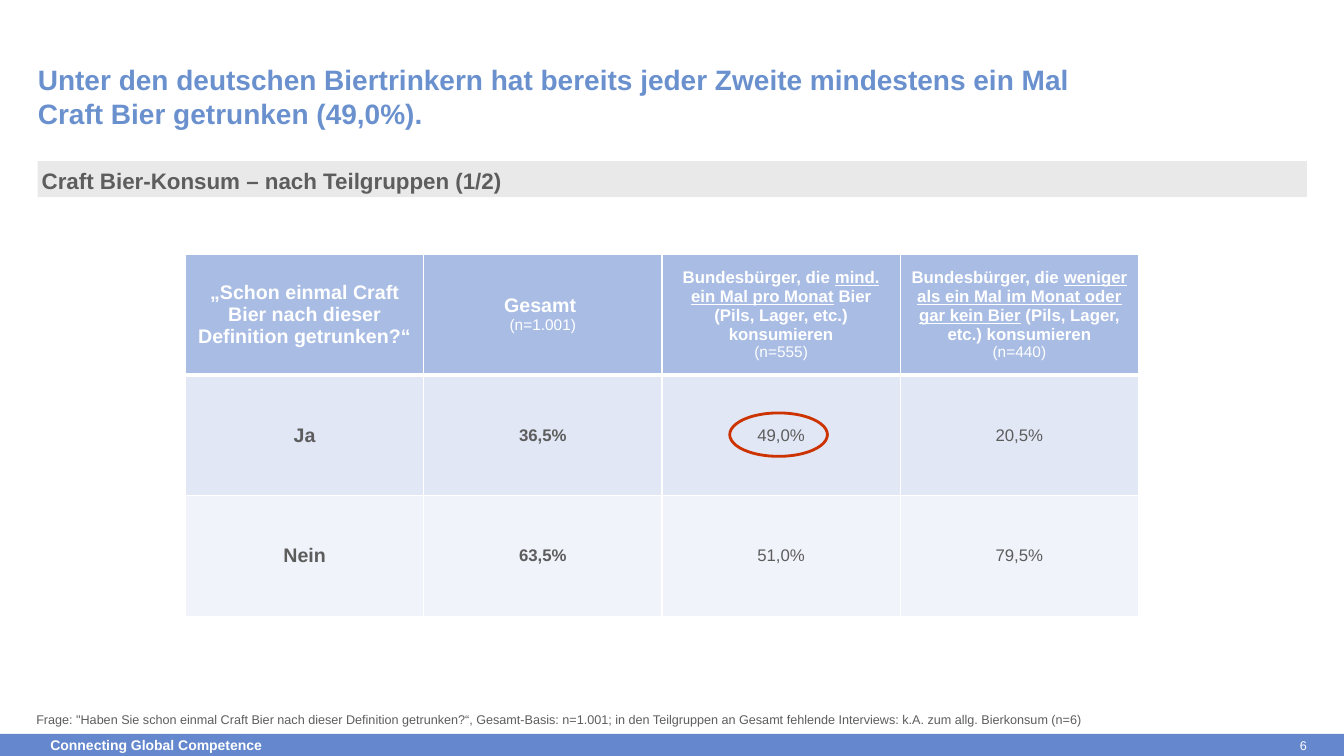
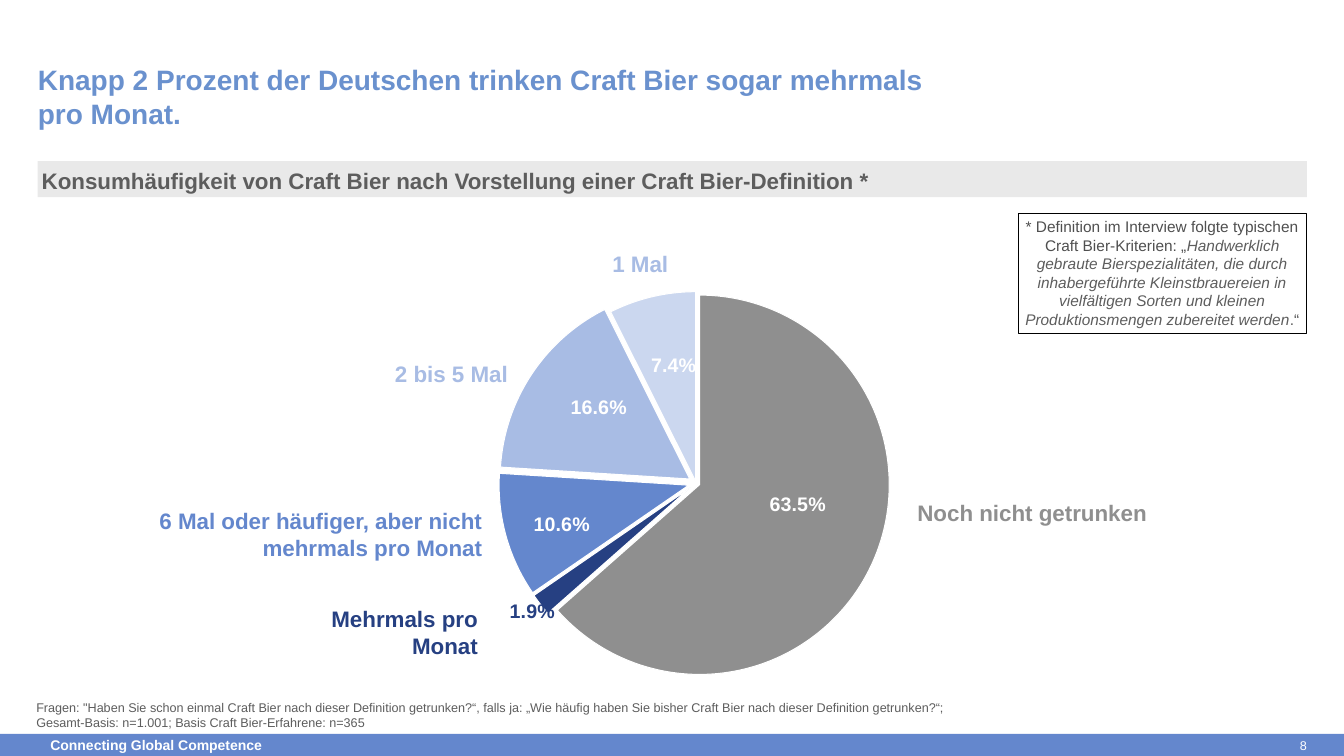
from lxml import etree
from pptx import Presentation
from pptx.chart.data import CategoryChartData
from pptx.dml.color import RGBColor
from pptx.enum.chart import XL_CHART_TYPE, XL_LABEL_POSITION
from pptx.enum.shapes import MSO_SHAPE
from pptx.enum.text import MSO_ANCHOR, MSO_AUTO_SIZE, PP_ALIGN
from pptx.oxml.ns import qn
from pptx.util import Pt

RECT, OVAL = MSO_SHAPE.RECTANGLE, MSO_SHAPE.OVAL
TOP, MID, LOW = MSO_ANCHOR.TOP, MSO_ANCHOR.MIDDLE, MSO_ANCHOR.BOTTOM
LEFT, MIDDLE, RIGHT = PP_ALIGN.LEFT, PP_ALIGN.CENTER, PP_ALIGN.RIGHT
PIE, CENTER = XL_CHART_TYPE.PIE, XL_LABEL_POSITION.CENTER
FIXED = MSO_AUTO_SIZE.NONE

FONT = "Arial"
WHITE = RGBColor(0xFF, 0xFF, 0xFF)
BLACK = RGBColor(0, 0, 0)
TITLE = RGBColor(0x6A, 0x91, 0xCE)
BLUE = RGBColor(0x64, 0x87, 0xCD)
NAVY = RGBColor(0x26, 0x40, 0x82)
SKY = RGBColor(0xA8, 0xBC, 0xE4)
PALE = RGBColor(0xCB, 0xD7, 0xEF)
ICE = RGBColor(0xE1, 0xE7, 0xF5)
MIST = RGBColor(0xF1, 0xF3, 0xFA)
GREY = RGBColor(0x8F, 0x8F, 0x8F)
TEXT = RGBColor(0x5D, 0x5D, 0x5D)
DARK = RGBColor(0x4F, 0x4F, 0x4F)
STRIP = RGBColor(0xE9, 0xE9, 0xE9)
RED = RGBColor(0xCC, 0x33, 0x00)

WIDTH, HEIGHT = 960, 540
PAD = 2.88
FOOT = (0, 524.2, WIDTH, 15.8)
HEAD = (27, 16.6, 793.4, 76.3)
BAND = (26.9, 115, 906.6, 25.9)
GRID = (132.5, 181.6, 680.8, 258.6)
CHART = (65.4, 172.8, 846.8, 334.8)
FRAME = (727.2, 152.4, 206, 85.8)


def pts(box):
    """Turn a box of numbers into lengths."""
    return [Pt(n) for n in box]


def style(font, size, color, bold=False):
    """Set the look of a font."""
    font.name = FONT
    font.size = Pt(size)
    font.bold = bold
    font.color.rgb = color


def setup(frame, pad, anchor):
    """Set insets, wrapping and anchor of a text frame."""
    frame.auto_size = FIXED
    frame.word_wrap = True
    frame.vertical_anchor = anchor
    frame.margin_left = frame.margin_right = Pt(pad)
    frame.margin_top = frame.margin_bottom = Pt(pad)


def fill_in(frame, text, size, color, bold=False, align=LEFT):
    """Write one paragraph in one style."""
    frame.text = text
    par = frame.paragraphs[0]
    par.alignment = align
    for run in par.runs:
        style(run.font, size, color, bold)
    return par


def label(slide, box, text, size, color, bold=False, align=LEFT, pad=0, anchor=TOP):
    """Add a plain text box."""
    frame = slide.shapes.add_textbox(*pts(box)).text_frame
    setup(frame, pad, anchor)
    fill_in(frame, text, size, color, bold, align)


def add_run(par, text, size, color, bold=False):
    """Append a styled run and return its font."""
    run = par.add_run()
    run.text = text
    style(run.font, size, color, bold)
    return run.font


def shape(slide, kind, box, fill=None, line=None, width=1):
    """Add a flat shape with optional fill and line."""
    item = slide.shapes.add_shape(kind, *pts(box))
    item.shadow.inherit = False
    if fill is None:
        item.fill.background()
    else:
        item.fill.solid()
        item.fill.fore_color.rgb = fill
    if line is None:
        item.line.fill.background()
    else:
        item.line.color.rgb = line
        item.line.width = Pt(width)
    return item


def place(holder, box):
    """Move a placeholder into a box."""
    holder.left, holder.top, holder.width, holder.height = pts(box)


def footer(slide, box, number):
    """Draw the footer band with slogan and slide number."""
    left, top, width, height = box
    shape(slide, RECT, box, BLUE)
    label(slide, (left + 36, top, 457, height), "Connecting Global Competence",
          10, WHITE, True, anchor=MID)
    label(slide, (left + width - 63, top, 36.6, height), number,
          9, WHITE, align=RIGHT, anchor=MID)


def page(deck, number, title, topic, note, top):
    """Add a slide with title, topic strip, footnote and footer."""
    slide = deck.slides.add_slide(deck.slide_layouts[1])
    footer(slide, FOOT, number)
    head, body = slide.placeholders
    place(head, HEAD)
    setup(head.text_frame, 0, LOW)
    fill_in(head.text_frame, title, 20, TITLE, True)
    place(body, BAND)
    body.fill.solid()
    body.fill.fore_color.rgb = STRIP
    setup(body.text_frame, PAD, MID)
    par = fill_in(body.text_frame, topic, 16, TEXT, True)
    props = par._p.get_or_add_pPr()
    props.set("marL", "0")
    props.set("indent", "0")
    etree.SubElement(props, qn("a:buNone"))
    par.line_spacing = 1.1
    par.space_before = Pt(0)
    label(slide, (25.9, top, 918, 521 - top), note, 9, TEXT)
    return slide


def edge(cell, base):
    """Give a cell white borders."""
    props = cell._tc.get_or_add_tcPr()
    for spot, side in enumerate(("lnL", "lnR", "lnT", "lnB")):
        width = base if side == "lnB" else 1
        line = etree.Element(qn("a:" + side), w=str(Pt(width)))
        paint = etree.SubElement(line, qn("a:solidFill"))
        etree.SubElement(paint, qn("a:srgbClr"), val=str(WHITE))
        props.insert(spot, line)


def header(cell, size, parts, count):
    """Write a column head whose second part is underlined."""
    par = cell.text_frame.paragraphs[0]
    par.alignment = MIDDLE
    for spot, text in enumerate(parts):
        add_run(par, text, size, WHITE, True).underline = spot == 1
    if count:
        par.add_line_break()
        add_run(par, count, 11, WHITE)


def grid(slide, box):
    """Draw the table of shares with the marked value."""
    heads = [
        (14, ["„Schon einmal Craft Bier nach dieser Definition getrunken?“"], ""),
        (14, ["Gesamt "], "(n=1.001)"),
        (12, ["Bundesbürger, die ", "mind. ein Mal pro Monat",
              " Bier (Pils, Lager, etc.) konsumieren"], "(n=555)"),
        (12, ["Bundesbürger, die ", "weniger als ein Mal im Monat oder gar kein Bier",
              " (Pils, Lager, etc.) konsumieren"], "(n=440)"),
    ]
    rows = [("Ja", "36,5%", "49,0%", "20,5%"), ("Nein", "63,5%", "51,0%", "79,5%")]
    table = slide.shapes.add_table(3, 4, *pts(box)).table
    table.first_row = table.horz_banding = False
    for y, fill in enumerate((SKY, ICE, MIST)):
        for x in range(4):
            cell = table.cell(y, x)
            cell.vertical_anchor = MID
            cell.fill.solid()
            cell.fill.fore_color.rgb = fill
            edge(cell, 1 if y else 3)
            if y:
                fill_in(cell.text_frame, rows[y - 1][x], 12 if x else 14,
                        TEXT, x < 2, MIDDLE)
            else:
                header(cell, *heads[x])
    left, top, width, height = box
    shape(slide, OVAL, (left + width * 0.57 + 0.7, top + height * 0.44 - 0.4, 69.8, 31),
          line=RED, width=2)


def layout(x, y, w=None, h=None):
    """Build a manual chart layout, for a plot if sized."""
    root = etree.Element(qn("c:layout"))
    manual = etree.SubElement(root, qn("c:manualLayout"))
    pairs = [("x", x), ("y", y)]
    if w:
        pairs = [("layoutTarget", "inner"), ("xMode", "edge"), ("yMode", "edge"),
                 *pairs, ("w", w), ("h", h)]
    for name, val in pairs:
        etree.SubElement(manual, qn("c:" + name), val=str(val))
    return root


def pie(slide, box):
    """Draw the pie of drinking frequency."""
    slices = [
        (0.635, GREY, WHITE, 2, 0.01, -0.04),
        (0.019, NAVY, NAVY, 4, -0.07, 0.14),
        (0.106, BLUE, WHITE, 4, -0.03, 0.03),
        (0.166, SKY, WHITE, 4, -0.01, -0.04),
        (0.074, PALE, WHITE, 1, 0, -0.05),
    ]
    data = CategoryChartData(number_format="0.0%")
    data.categories = ["1", "2", "3", "4", "5"]
    data.add_series("Series 1", [part[0] for part in slices])
    chart = slide.shapes.add_chart(PIE, *pts(box), data).chart
    chart.has_legend = chart.has_title = False
    style(chart.font, 10, TEXT)
    area = chart._chartSpace.find(".//" + qn("c:plotArea"))
    for old in area.findall(qn("c:layout")):
        area.remove(old)
    area.insert(0, layout(0.35, 0.11, 0.32, 0.81))
    plot = chart.plots[0]
    plot.vary_by_categories = True
    plot.has_data_labels = True
    plot.data_labels.number_format = "0.0%"
    plot.data_labels.number_format_is_linked = False
    series = plot.series[0]
    for spot, (_, fill, ink, _, _, _) in enumerate(slices):
        point = series.points[spot]
        point.format.fill.solid()
        point.format.fill.fore_color.rgb = fill
        point.format.line.color.rgb = WHITE
        point.format.line.width = Pt(0.75)
        style(point.data_label.font, 14, ink, True)
        point.data_label.position = CENTER
    wedges = series._element.findall(qn("c:dPt"))
    tags = series._element.findall(".//" + qn("c:dLbl"))
    for wedge, tag, (_, _, _, gap, x, y) in zip(wedges, tags, slices):
        wedge.insert(1, etree.Element(qn("c:explosion"), val=str(gap)))
        tag.insert(1, layout(x, y))


def names(slide, box):
    """Label the slices around the pie."""
    left, top = box[:2]
    for x, y, width, height, text, color, align in (
        (587, 181, 181.4, 25.2, "Noch nicht getrunken", GREY, LEFT),
        (47.6, 81.4, 252.7, 25.2, "2 bis 5 Mal", SKY, RIGHT),
        (38, 186.4, 244, 44.6, "6 Mal oder häufiger, aber nicht mehrmals pro Monat",
         BLUE, RIGHT),
        (160, 256.4, 118.8, 44.6, "Mehrmals pro Monat", NAVY, RIGHT),
        (162.1, 2.8, 252.7, 25.2, "1 Mal", SKY, RIGHT),
    ):
        label(slide, (left + x, top + y, width, height), text, 16, color,
              True, align, PAD)


def define(slide, box):
    """Add the framed definition."""
    frame = shape(slide, RECT, box, line=BLACK, width=0.75).text_frame
    setup(frame, PAD, TOP)
    par = frame.paragraphs[0]
    par.alignment = MIDDLE
    for text, color, slant in (
        ("* Definition im Interview folgte typischen Craft Bier-Kriterien: „", DARK, False),
        ("Handwerklich gebraute Bierspezialitäten, die durch inhabergeführte "
         "Kleinstbrauereien in vielfältigen Sorten und kleinen Produktionsmengen "
         "zubereitet werden", TEXT, True),
        (".", TEXT, False),
        ("“", DARK, False),
    ):
        add_run(par, text, 11, color).italic = slant


def main():
    """Build and save both slides."""
    deck = Presentation()
    deck.slide_width, deck.slide_height = Pt(WIDTH), Pt(HEIGHT)
    slide = page(
        deck, "6",
        "Unter den deutschen Biertrinkern hat bereits jeder Zweite mindestens ein Mal "
        "\vCraft Bier getrunken (49,0%).",
        "Craft Bier-Konsum – nach Teilgruppen (1/2)",
        "Frage: \"Haben Sie schon einmal Craft Bier nach dieser Definition getrunken?“, "
        "Gesamt-Basis: n=1.001; in den Teilgruppen an Gesamt fehlende Interviews: "
        "k.A. zum allg. Bierkonsum (n=6)", 508.6)
    grid(slide, GRID)
    slide = page(
        deck, "8",
        "Knapp 2 Prozent der Deutschen trinken Craft Bier sogar mehrmals \vpro Monat.",
        "Konsumhäufigkeit von Craft Bier nach Vorstellung einer Craft Bier-Definition *",
        "Fragen: \"Haben Sie schon einmal Craft Bier nach dieser Definition getrunken?“, "
        "falls ja: „Wie häufig haben Sie bisher Craft Bier nach dieser Definition "
        "getrunken?“; \vGesamt-Basis: n=1.001; Basis Craft Bier-Erfahrene: n=365", 500)
    pie(slide, CHART)
    names(slide, CHART)
    define(slide, FRAME)
    deck.save("out.pptx")


if __name__ == "__main__":
    main()
